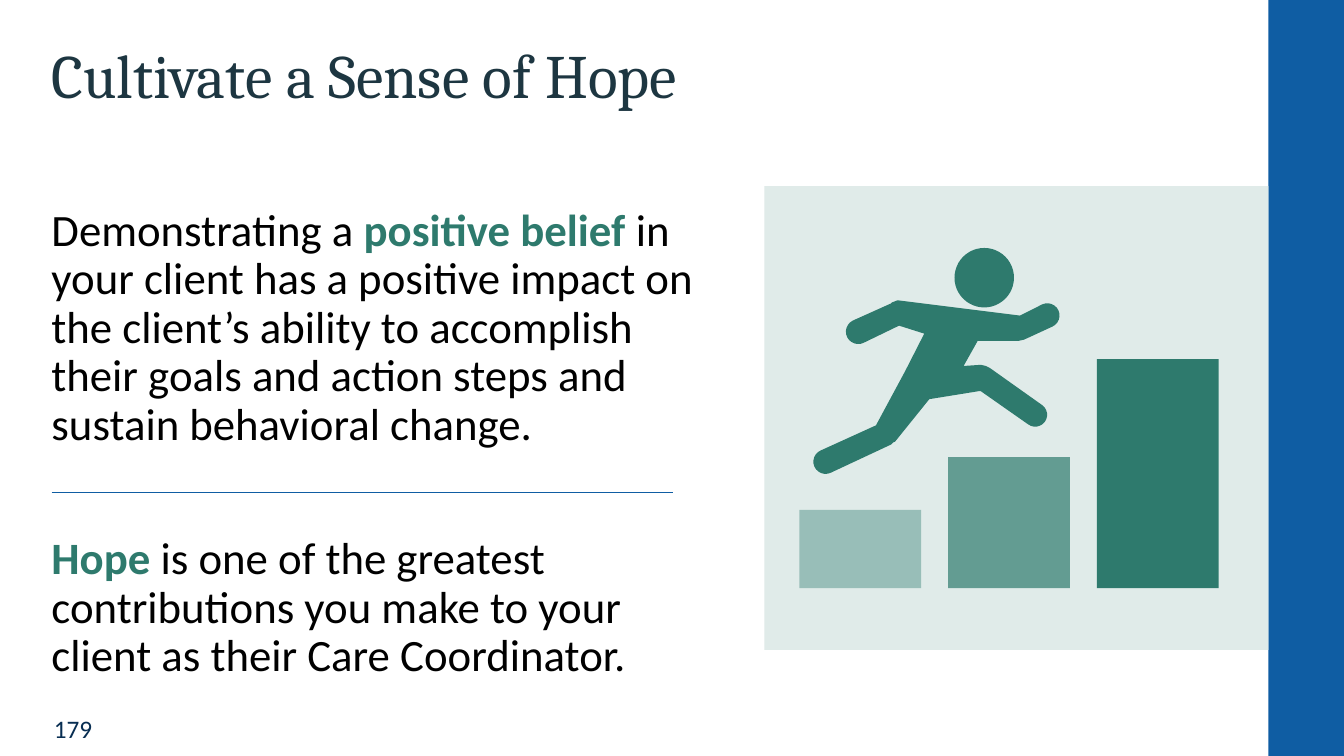
from dataclasses import dataclass
from math import cos, pi, sin
from lxml.etree import SubElement
from pptx import Presentation
from pptx.dml.color import RGBColor
from pptx.enum.shapes import MSO_CONNECTOR, MSO_SHAPE
from pptx.enum.text import MSO_ANCHOR, PP_ALIGN
from pptx.oxml.ns import qn
from pptx.util import Pt


@dataclass(frozen=True)
class Theme:
    blue: str = "0F5DA3"
    navy: str = "082E52"
    slate: str = "1D3641"
    green: str = "2E7A6D"
    pale: str = "E0EBE9"
    black: str = "000000"
    head: str = "Cambria"
    body: str = "Calibri"
    big: int = 44
    text: int = 32
    small: int = 18


THEME = Theme()
TITLE = "Cultivate a Sense of Hope"
BODY = [
    [("Demonstrating a ", False), ("positive belief ", True),
     ("in your client has a positive impact on the client’s ability to "
      "accomplish their goals and action steps and sustain behavioral change.", False)],
    [("Hope ", True),
     ("is one of the greatest contributions you make to your client "
      "as their Care Coordinator.", False)],
]
NUMBER = "179"
BARS = [(56, "98BEB8"), (93.6, "639C92"), (163.6, THEME.green)]
EDGES = [
    [(640.8, 214.6), (642.2, 214.6), (728.6, 225.4), (744.5, 217.4)],
    [(751.7, 233.3), (733, 241.9), (731.5, 242.6), (727.9, 243.4),
     (698.4, 243.4), (688.3, 261.4), (700.6, 260.6), (704.2, 261.4),
     (707, 262.8), (744.5, 289.4)],
    [(734.4, 303.1), (700.6, 279.4), (699.1, 279.4), (663.8, 285.1),
     (639.4, 315.4), (637.9, 316.1), (636.5, 317.5), (635, 318.2), (593.3, 337.7)],
    [(586.1, 321.8), (625.7, 303.8), (646.6, 265), (660.2, 238.3),
     (642.2, 232.6), (617, 244.8)],
    [(609.1, 229), (636.5, 216.7), (637.2, 216)],
]


def apply(item, values):
    for name, value in values.items():
        setattr(item, name, value)


def paint(shape, color):
    shape.shadow.inherit = False
    shape.fill.solid()
    shape.fill.fore_color.rgb = RGBColor.from_string(color)
    shape.line.fill.background()


def block(slide, kind, box, color):
    paint(slide.shapes.add_shape(kind, *map(Pt, box)), color)


def write(shape, box, paras, face, size, anchor=MSO_ANCHOR.TOP, gap=0, lead=0.9):
    apply(shape, dict(zip(("left", "top", "width", "height"), map(Pt, box))))
    frame = shape.text_frame
    apply(frame, dict(word_wrap=True, vertical_anchor=anchor, margin_left=0,
                      margin_right=0, margin_top=0, margin_bottom=0))
    for i, runs in enumerate(paras):
        para = frame.add_paragraph() if i else frame.paragraphs[0]
        apply(para, dict(alignment=PP_ALIGN.LEFT, line_spacing=lead,
                         space_before=Pt(gap if i else 0)))
        for words, color, bold in runs:
            run = para.add_run()
            run.text = words
            apply(run.font, dict(name=face, size=Pt(size), bold=bold))
            run.font.color.rgb = RGBColor.from_string(color)


def cap(first, last, steps=12):
    midx, midy = (first[0] + last[0]) / 2, (first[1] + last[1]) / 2
    x, y = first[0] - midx, first[1] - midy
    turns = [pi * n / steps for n in range(1, steps)]
    return [(midx + x * cos(t) - y * sin(t), midy + x * sin(t) + y * cos(t))
            for t in turns]


def runner(slide):
    points = []
    for i, edge in enumerate(EDGES):
        if i:
            points += cap(points[-1], edge[0])
        points += edge
    dots = [(Pt(x), Pt(y)) for x, y in points]
    pen = slide.shapes.build_freeform(*dots[0], scale=1.0)
    pen.add_line_segments(dots[1:], close=True)
    paint(pen.convert_to_shape(), THEME.green)
    block(slide, MSO_SHAPE.OVAL, (681.8, 177.1, 42.5, 42.5), THEME.green)


def main():
    deck = Presentation()
    apply(deck, dict(slide_width=Pt(960), slide_height=Pt(540)))
    slide = deck.slides.add_slide(deck.slide_layouts[5])
    shapes = slide.shapes
    left = 36.8
    block(slide, MSO_SHAPE.RECTANGLE, (906, 0, 54, 540), THEME.blue)
    write(shapes.title, (left, 32.4, 828, 65.5),
          [[(TITLE, THEME.slate, False)]], THEME.head, THEME.big)
    paras = [[(words, THEME.green if key else THEME.black, key)
              for words, key in runs] for runs in BODY]
    box = (left, 148.3, 473, 320.4)
    write(shapes.add_textbox(*map(Pt, box)), box, paras,
          THEME.body, THEME.text, gap=61.8)
    box = (38.4, 504.7, 51, 31)
    write(shapes.add_textbox(*map(Pt, box)), box, [[(NUMBER, THEME.navy, False)]],
          THEME.body, THEME.small, MSO_ANCHOR.MIDDLE, lead=1.0)
    block(slide, MSO_SHAPE.RECTANGLE, (546, 133, 360, 331.2), THEME.pale)
    for i, (high, color) in enumerate(BARS):
        block(slide, MSO_SHAPE.RECTANGLE,
              (571 + i * 106.2, 420.2 - high, 87, high), color)
    runner(slide)
    rule = shapes.add_connector(MSO_CONNECTOR.STRAIGHT,
                                *map(Pt, (left, 351.8, 480.4, 351.8)))
    rule.line.width = Pt(0.5)
    rule.line.color.rgb = RGBColor.from_string(THEME.blue)
    SubElement(rule.element.spPr, qn("a:effectLst"))
    deck.save("out.pptx")


if __name__ == "__main__":
    main()
